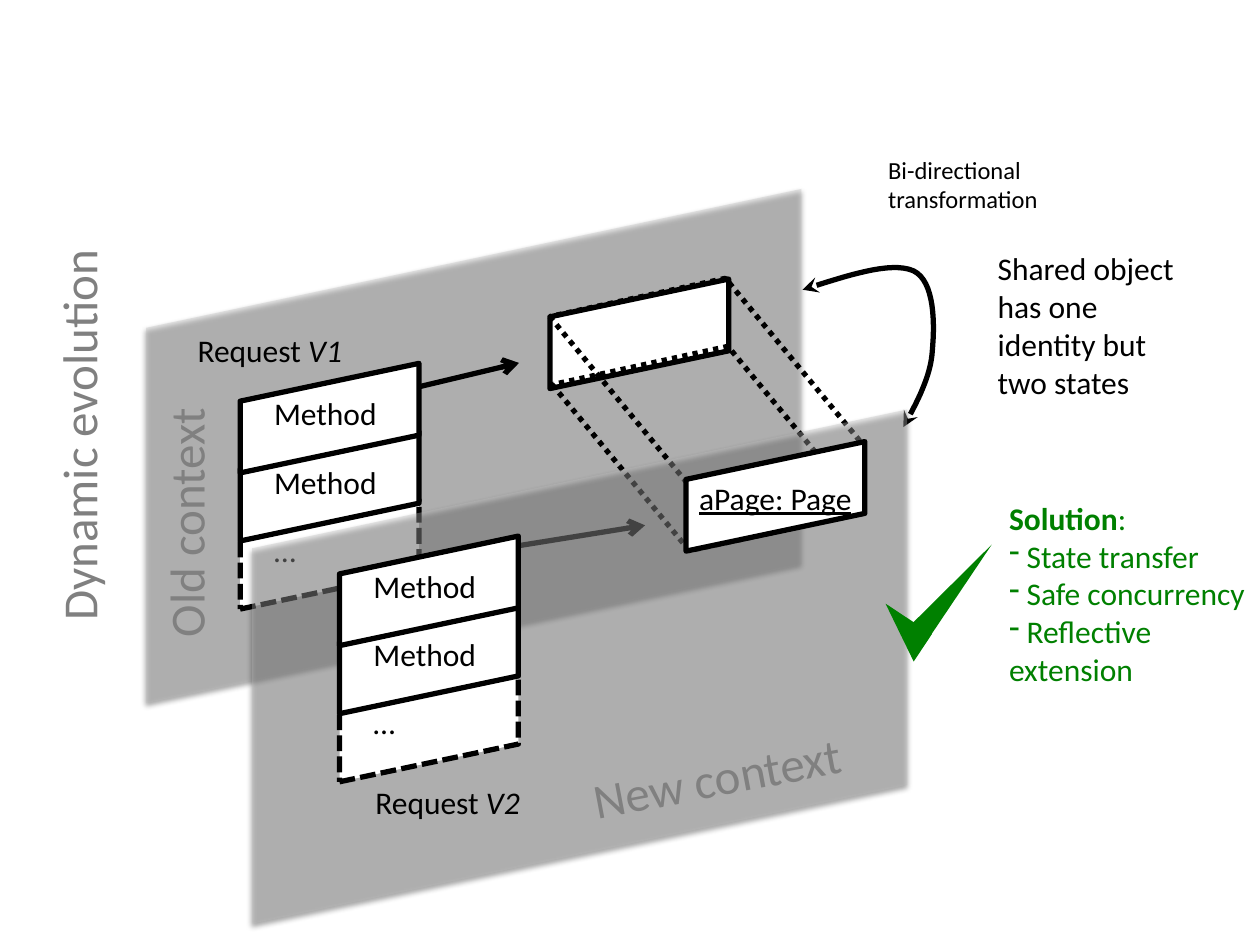
from lxml.etree import SubElement
from pptx import Presentation
from pptx.dml.color import RGBColor
from pptx.enum.dml import MSO_LINE
from pptx.enum.shapes import MSO_CONNECTOR, MSO_SHAPE
from pptx.enum.text import MSO_AUTO_SIZE, PP_ALIGN
from pptx.oxml.ns import qn
from pptx.util import Pt

HUES = {"ink": "000000", "paper": "FFFFFF", "panel": "BFBFBF",
        "label": "808080", "good": "008000"}
CELL = (62.6, 102.2)   # width and height before the quarter turn
STEP = 38.9            # from one method cell to the next


def hue(name):
    return RGBColor.from_string(HUES[name])


def add_xml(parent, tag, **attrs):
    return SubElement(parent, qn(tag), attrs)


def add_text(shapes, box, paras, size=18, color="ink", turn=0, wrap=True,
             align=PP_ALIGN.LEFT, bullet=None):
    """Each paragraph is a list of (text, format) runs; bullets skip the first."""
    item = shapes.add_textbox(*map(Pt, box))
    item.rotation = turn
    frame = item.text_frame
    frame.word_wrap = wrap
    frame.auto_size = MSO_AUTO_SIZE.SHAPE_TO_FIT_TEXT
    for i, runs in enumerate(paras):
        para = frame.paragraphs[0] if i == 0 else frame.add_paragraph()
        para.alignment = align
        if bullet and i:
            add_xml(para._p.get_or_add_pPr(), "a:buChar", char=bullet)
        for text, extra in runs:
            run = para.add_run()
            run.text = text
            run.font.color.rgb = hue(color)
            look = {"name": "Calibri", "size": Pt(size), **extra}
            for key, value in look.items():
                setattr(run.font, key, value)


def add_form(shapes, kind, box, turn, fill=None, dash=None, line=True,
             flip=None, adj=None):
    item = shapes.add_shape(kind, *map(Pt, box))
    item.rotation = turn
    item.shadow.inherit = False
    if flip:
        item._element.spPr.find(qn("a:xfrm")).set(flip, "1")
    if adj is not None:
        item.adjustments[0] = adj
    if fill:
        item.fill.solid()
        item.fill.fore_color.rgb = hue(fill)
    else:
        item.fill.background()
    if line:
        ink_line(item.line, dash)
    else:
        item.line.fill.background()
    return item


def ink_line(line, dash=None):
    line.color.rgb = hue("ink")
    for key, value in {"width": Pt(3), "dash_style": dash}.items():
        setattr(line, key, value)


def add_panel(shapes, x, y):
    """Translucent context plane with a soft shadow."""
    item = add_form(shapes, MSO_SHAPE.PARALLELOGRAM, (x, y, 293.8, 374.4), 270,
                    "panel", line=False, flip="flipV", adj=0.27)
    props = item._element.spPr
    tint = props.find(qn("a:solidFill")).find(qn("a:srgbClr"))
    add_xml(tint, "a:alpha", val="35000")
    glow = add_xml(props.find(qn("a:effectLst")), "a:outerShdw",
                   blurRad=str(Pt(3.1)), dist=str(Pt(1.8)), dir="5400000",
                   rotWithShape="0")
    shade = add_xml(glow, "a:srgbClr", val=HUES["ink"])
    add_xml(shade, "a:alpha", val="35000")


def add_cell(shapes, x, y, dash=None):
    add_form(shapes, MSO_SHAPE.PARALLELOGRAM, (x, y, *CELL), 270, "paper",
             dash, flip="flipV", adj=0.345)


def add_stack(shapes, x, y):
    """Request object: two methods and an open dashed end, bottom first."""
    rows = [("Method", None), ("Method", None), ("…", MSO_LINE.SQUARE_DOT)]
    for i, (text, dash) in reversed(list(enumerate(rows))):
        top = y + i * STEP
        add_cell(shapes, x, top, dash)
        add_text(shapes, (x - 7.5, top + 34, 90, 28.8), [[(text, {})]])


def add_request(shapes, x, y, name):
    add_text(shapes, (x, y, 101.5, 28.8),
             [[("Request ", {}), (name, {"italic": True})]], wrap=False)


def add_arrow(shapes, start, end):
    item = shapes.add_connector(MSO_CONNECTOR.STRAIGHT, *map(Pt, start + end))
    ink_line(item.line)
    add_xml(item.line._get_or_add_ln(), "a:tailEnd", type="arrow")
    add_xml(item._element.spPr, "a:effectLst")


def bend(a, b, c, d, steps=16):
    """Points along a cubic curve, without its start."""
    for i in range(1, steps + 1):
        t = i / steps
        u = 1 - t
        yield tuple(Pt(u**3 * p + 3 * u * u * t * q + 3 * u * t * t * r + t**3 * s)
                    for p, q, r, s in zip(a, b, c, d))


def add_curve(shapes, knots):
    dots = [dot for i in range(0, len(knots) - 1, 3)
            for dot in bend(*knots[i:i + 4])]
    pen = shapes.build_freeform(*map(Pt, knots[0]))
    pen.add_line_segments(dots, close=False)
    item = pen.convert_to_shape()
    item.shadow.inherit = False
    item.fill.background()
    ink_line(item.line)
    for tag in ("a:headEnd", "a:tailEnd"):
        add_xml(item.line._get_or_add_ln(), tag, type="stealth")


def add_check(shapes):
    group = shapes.add_group_shape()
    for box, turn in [((504.7, 329.8, 72, 14.4), 303.9),
                      ((498.2, 352.1, 31.7, 18.7), 213.5)]:
        add_form(group.shapes, MSO_SHAPE.RIGHT_TRIANGLE, box, turn, "good",
                 line=False)


def main():
    deck = Presentation()
    deck.slide_width, deck.slide_height = Pt(720), Pt(540)
    shapes = deck.slides.add_slide(deck.slide_layouts[6]).shapes

    # Old context
    add_panel(shapes, 123.8, 67.7)
    add_request(shapes, 105.8, 185.8, "V1")
    add_arrow(shapes, (236.2, 221.8), (296.6, 207.4))
    add_stack(shapes, 157, 187.9)
    add_cell(shapes, 334, 139.7)
    add_text(shapes, (32.4, 277.2, 146.9, 41), [[("Old context", {})]], 28,
             "label", 270, wrap=False)

    # Links between the two states
    for x, y in [(325.4, 201.6), (324, 162.7)]:
        add_form(shapes, MSO_SHAPE.PARALLELOGRAM, (x, y, 159.1, 109.4), 167.7,
                 dash=MSO_LINE.ROUND_DOT, flip="flipH", adj=0.515)
    add_arrow(shapes, (296.6, 311.8), (368.6, 300.2))
    add_curve(shapes, [(458.6, 165.6), (483.8, 157.7), (509, 149), (522, 154.8),
                       (534.2, 160.6), (534.2, 185), (532.8, 200.2),
                       (532.1, 214.6), (524.2, 229.7), (516.2, 244.1)])

    # New context
    add_panel(shapes, 184.3, 193.7)
    add_cell(shapes, 411.8, 232.6)
    add_text(shapes, (392.4, 270, 108, 28.8),
             [[("aPage: Page", {"underline": True})]])
    add_text(shapes, (331.2, 423.4, 159.1, 41), [[("New context", {})]], 28,
             "label", 349.3, wrap=False)
    add_stack(shapes, 213.8, 286.6)
    add_request(shapes, 207.4, 444.2, "V2")

    # Notes around the planes
    add_text(shapes, (-95.8, 228.2, 280.8, 41), [[("Dynamic evolution", {})]],
             28, "label", 270, align=PP_ALIGN.CENTER)
    add_text(shapes, (500.4, 85, 106.6, 41),
             [[("Bi-directional transformation", {})]], 14)
    add_text(shapes, (563, 139, 128.9, 94.3),
             [[("Shared object has one identity but two states", {})]])
    points = ["State transfer", "Safe concurrency", "Reflective extension"]
    add_text(shapes, (569.5, 281.5, 150.5, 138.2),
             [[("Solution", {"bold": True}), (":", {})]]
             + [[(" " + point, {})] for point in points],
             color="good", bullet="-")
    add_check(shapes)

    deck.save("out.pptx")


if __name__ == "__main__":
    main()
